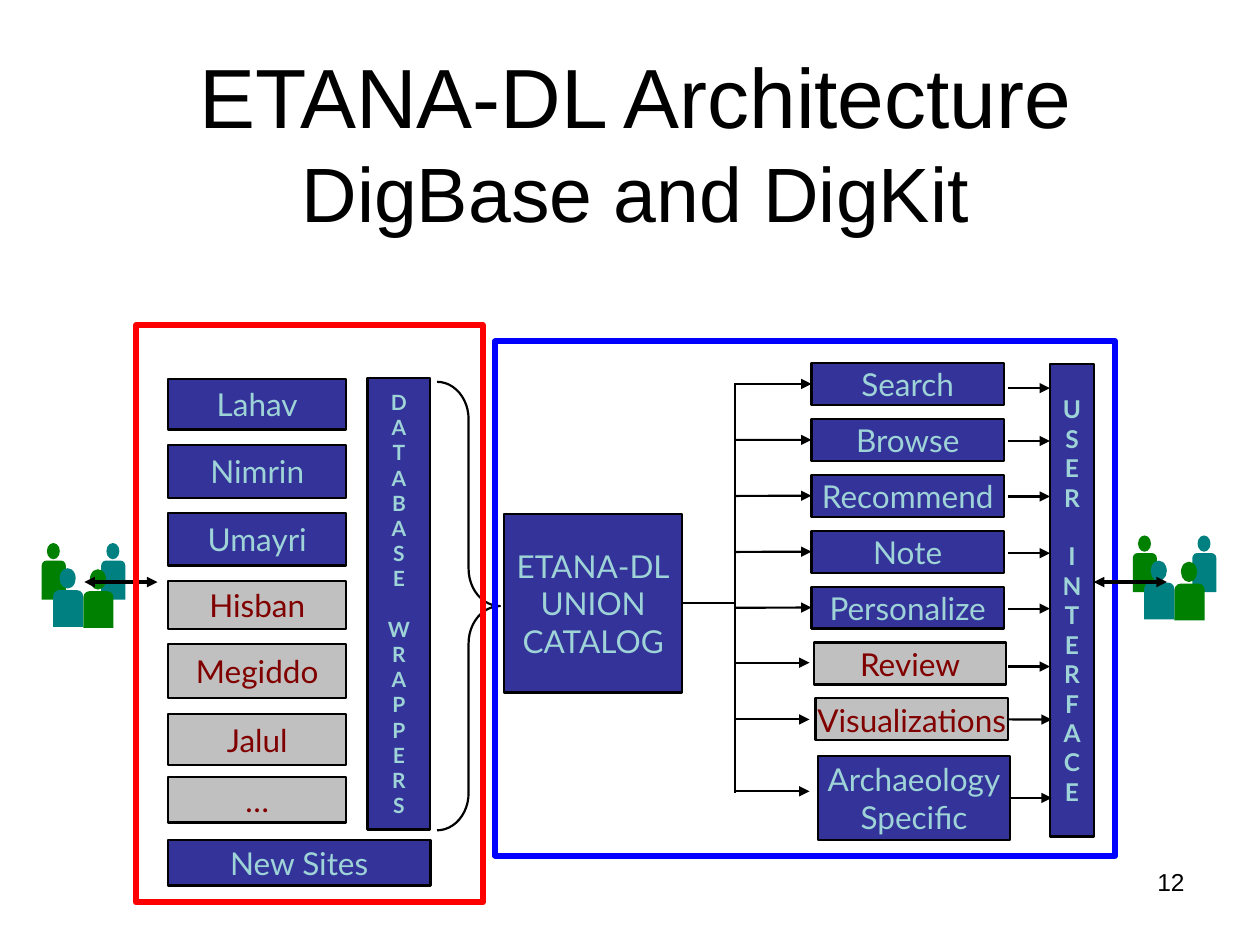
from pptx import Presentation
from pptx.dml.color import RGBColor
from pptx.enum.shapes import MSO_CONNECTOR as Link, MSO_SHAPE as Shape
from pptx.enum.text import MSO_ANCHOR as Anchor, PP_ALIGN as Align
from pptx.oxml.ns import qn
from pptx.util import Pt
from lxml.etree import SubElement

COLORS = {
    "black": "000000", "navy": "333399", "sky": "9ED3D7", "silver": "C0C0C0",
    "maroon": "800000", "red": "FF0000", "blue": "0000FF",
    "green": "008000", "teal": "008080",
}
TOP, LEFT, BOTTOM, RIGHT = range(4)


def rgb(name):
    return RGBColor.from_string(COLORS[name])


def add_span(para, text, size=18, color="black", font="Lato", bold=False, align=Align.CENTER):
    para.alignment = align
    span = para.add_run()
    span.text = text
    span.font.size = Pt(size)
    span.font.name = font
    span.font.bold = bold
    span.font.color.rgb = rgb(color)


class Painter:
    line_width = 1.25

    def __init__(self, page):
        self.page = page

    def label(self, left, top, width, height, lines, anchor=Anchor.TOP, **style):
        box = self.page.shapes.add_textbox(Pt(left), Pt(top), Pt(width), Pt(height))
        frame = box.text_frame
        frame.word_wrap = True
        frame.vertical_anchor = anchor
        para = frame.paragraphs[0]
        for index, (text, size) in enumerate(lines):
            if index:
                para.add_line_break()
            add_span(para, text, size=size, font="Arial", **style)

    def shape(self, kind, left, top, width, height, fill=None, line=None,
              line_width=line_width, parent=None):
        shapes = (parent or self.page).shapes
        item = shapes.add_shape(kind, Pt(left), Pt(top), Pt(width), Pt(height))
        item.shadow.inherit = False
        if fill:
            item.fill.solid()
            item.fill.fore_color.rgb = rgb(fill)
        else:
            item.fill.background()
        if line:
            item.line.color.rgb = rgb(line)
            item.line.width = Pt(line_width)
        else:
            item.line.fill.background()
        return item

    def box(self, left, top, width, height, lines, planned=False, size=18, bold=False):
        fill, color = ("silver", "maroon") if planned else ("navy", "sky")
        item = self.shape(Shape.RECTANGLE, left, top, width, height, fill, "black")
        frame = item.text_frame
        frame.word_wrap = False
        frame.vertical_anchor = Anchor.MIDDLE
        for index, text in enumerate(lines):
            para = frame.add_paragraph() if index else frame.paragraphs[0]
            add_span(para, text, size=size, color=color, bold=bold)
        return item

    def tower(self, left, top, width, height, words, size):
        item = self.box(left, top, width, height, "".join(words), size=size, bold=True)
        item.text_frame.paragraphs[len(words[0])].space_before = Pt(size * 1.2)

    def frame(self, left, top, width, height, color):
        self.shape(Shape.RECTANGLE, left, top, width, height, line=color, line_width=3.5)

    def brace(self, left, top, width, height):
        item = self.shape(Shape.RIGHT_BRACE, left, top, width, height, line="black")
        item.adjustments[0] = 0.593
        item.adjustments[1] = 0.5

    def line(self, x1, y1, x2, y2, ends=(), width=line_width):
        link = self.page.shapes.add_connector(Link.STRAIGHT, Pt(x1), Pt(y1), Pt(x2), Pt(y2))
        link.line.color.rgb = rgb("black")
        link.line.width = Pt(width)
        for end in ends:
            SubElement(link.line._get_or_add_ln(), qn(f"a:{end}"), type="triangle")
        SubElement(link._element.spPr, qn("a:effectLst"))
        return link

    def person(self, group, left, top, color, scale, body_height):
        body = self.shape(Shape.ROUND_2_SAME_RECTANGLE, left, top + 10 * scale,
                          13.8 * scale, body_height, color, parent=group)
        body.adjustments[0] = 0.21
        self.shape(Shape.OVAL, left + 3 * scale, top, 7.4 * scale, 9.3 * scale,
                   color, parent=group)

    def people(self, left, top):
        group = self.page.shapes.add_group_shape()
        self.person(group, left, top, "green", 1, 22.3)
        self.person(group, left + 34, top, "teal", 1, 22.3)
        self.person(group, left + 23.8, top + 15, "green", 1.25, 21)
        self.person(group, left + 6.5, top + 14.4, "teal", 1.25, 21)


SITES = [
    ("Lahav", 216.7, 28.8, False), ("Nimrin", 254.2, 30.2, False),
    ("Umayri", 293, 30.2, False), ("Hisban", 331.9, 27.4, True),
    ("Megiddo", 367.9, 31, True), ("Jalul", 408.2, 28.8, True),
    ("…", 444.2, 25.9, True),
]
SERVICES = ["Search", "Browse", "Recommend", "Note", "Personalize",
            "Review", "Visualizations", "Archaeology Specific"]
SERVICE_LEFTS = [463.7] * 5 + [465, 466, 467.3]
ARROW_IN = [219.4, 251.4, 283.4, 315.4, 347.3, 378.7, 411.1, 452.2]
ARROW_OUT = [221.8, 252, 283.7, 316.1, 347.8, 380.9, 411.2, 456]


def main():
    deck = Presentation()
    deck.slide_width, deck.slide_height = Pt(720), Pt(540)
    painter = Painter(deck.slides.add_slide(deck.slide_layouts[6]))

    painter.label(516.2, 491.8, 167.8, 37.4, [("12", 14)], align=Align.RIGHT)
    painter.label(80.6, 50.4, 565.2, 60.5,
                  [("ETANA-DL Architecture", 48), ("DigBase and DigKit", 44)], Anchor.MIDDLE)

    for name, top, height, planned in SITES:
        painter.box(96, top, 102, height, [name], planned)
    painter.box(96, 480.2, 150, 25.9, ["New Sites"])
    painter.tower(210, 216, 36, 258, ["DATABASE", "WRAPPERS"], 12)
    catalog = painter.box(288, 293.8, 102, 102, ["ETANA-DL", "UNION", "CATALOG"])
    painter.brace(249.8, 218.2, 36, 256.3)
    painter.tower(600, 208, 25.2, 270, ["USER", "INTERFACE"], 14)

    painter.line(390, 344.8, 420, 344.8).begin_connect(catalog, RIGHT)
    painter.line(420, 218.9, 420, 452.9)
    rows = zip(SERVICES, SERVICE_LEFTS, ARROW_IN, ARROW_OUT)
    for index, (name, left, y_in, y_out) in enumerate(rows):
        last = index == len(SERVICES) - 1
        top, height = (432, 48) if last else (207.4 + 31.95 * index, 24)
        service = painter.box(left, top, 110, height, name.split(), index in (5, 6))
        arrow_in = painter.line(420.5, y_in, 462.6, y_in, ["tailEnd"])
        if index < 5:
            arrow_in.end_connect(service, LEFT)
        shift = 1 if index > 5 else 0
        arrow_out = painter.line(576 + shift, y_out, 600 + shift, y_out, ["tailEnd"])
        if index > 5:
            arrow_out.begin_connect(service, RIGHT)

    painter.frame(283, 195.1, 354.2, 293.8, "blue")
    for people_left, people_top, arrow_left in [(647.3, 306, 625), (23.8, 310.3, 48.2)]:
        painter.people(people_left, people_top)
        painter.line(arrow_left, 332.6, arrow_left + 41.8, 332.6, ["headEnd", "tailEnd"], 2)
    painter.frame(77.8, 185.8, 198, 329.8, "red")

    deck.save("out.pptx")


if __name__ == "__main__":
    main()
